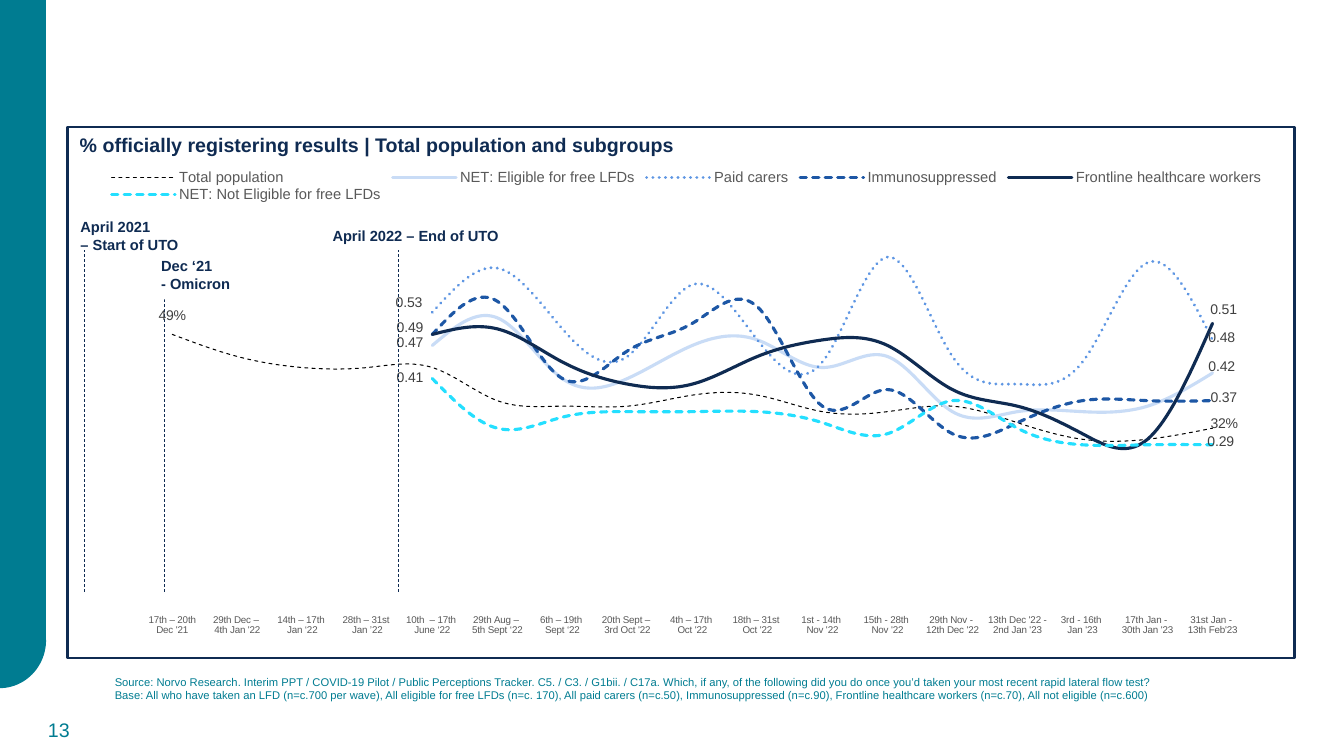
from lxml import etree
from pptx import Presentation
from pptx.chart.data import CategoryChartData
from pptx.dml.color import RGBColor
from pptx.enum.chart import XL_CHART_TYPE, XL_LABEL_POSITION, XL_LEGEND_POSITION
from pptx.enum.dml import MSO_LINE
from pptx.enum.shapes import MSO_CONNECTOR, MSO_SHAPE
from pptx.enum.text import MSO_ANCHOR, PP_ALIGN
from pptx.oxml.ns import qn
from pptx.util import Inches, Pt

DASH, DOT, SHORT_DASH = MSO_LINE.DASH, MSO_LINE.ROUND_DOT, MSO_LINE.SQUARE_DOT
LEFT, RIGHT, ABOVE = XL_LABEL_POSITION.LEFT, XL_LABEL_POSITION.RIGHT, XL_LABEL_POSITION.ABOVE
TEAL = RGBColor(0x00, 0x7C, 0x91)
NAVY = RGBColor(0x0F, 0x2B, 0x52)
WHITE = RGBColor(0xFF, 0xFF, 0xFF)
BLACK = RGBColor(0x00, 0x00, 0x00)
GREY = RGBColor(0x59, 0x59, 0x59)
LABEL_GREY = RGBColor(0x40, 0x40, 0x40)
PALE_BLUE = RGBColor(0xC9, 0xDC, 0xF6)
SKY_BLUE = RGBColor(0x5E, 0x96, 0xE3)
MID_BLUE = RGBColor(0x1D, 0x57, 0xA5)
CYAN = RGBColor(0x24, 0xDF, 0xFF)
FONT = "Arial"

HEADING = "% officially registering results | Total population and subgroups"
SOURCE = [
    "Source: Norvo Research. Interim PPT / COVID-19 Pilot / Public Perceptions Tracker. C5. / C3. / G1bii. / C17a. "
    "Which, if any, of the following did you do once you’d taken your most recent rapid lateral flow test?",
    "Base: All who have taken an LFD (n=c.700 per wave), All eligible for free LFDs (n=c. 170), "
    "All paid carers (n=c.50), Immunosuppressed (n=c.90), Frontline healthcare workers (n=c.70), "
    "All not eligible (n=c.600)",
]
WAVES = [
    "17th – 20th Dec '21", "29th Dec – \n4th Jan '22", "14th – 17th \nJan ‘22",
    "28th – 31st \nJan ’22", "10th  – 17th \nJune ‘22", "29th Aug – \n5th Sept ‘22",
    "6th – 19th \nSept ‘22", "20th Sept – \n3rd Oct '22", "4th – 17th \nOct '22",
    "18th – 31st \nOct '22", "1st - 14th \nNov '22", "15th - 28th \nNov '22",
    "29th Nov - \n12th Dec '22", "13th Dec '22 -\n2nd Jan '23", "3rd - 16th \nJan '23",
    "17th Jan - \n30th Jan '23", "31st Jan - \n13th Feb'23",
]
LAST = len(WAVES) - 1
START = 4
SERIES = [
    ("Total population", BLACK, 0.75, DASH,
     {0: (ABOVE, 0, -0.07), LAST: (RIGHT, -0.06, -0.05)},
     [0.49, 0.45, 0.43, 0.43, 0.43, 0.37, 0.36, 0.36, 0.38, 0.38, 0.35, 0.35, 0.36, 0.33, 0.3, 0.3, 0.32]),
    ("NET: Eligible for free LFDs", PALE_BLUE, 2.25, None,
     {START: (LEFT, -0.05, -0.03), LAST: (RIGHT, -0.08, -0.06)},
     [0.47, 0.52, 0.41, 0.41, 0.47, 0.48, 0.43, 0.45, 0.35, 0.35, 0.35, 0.36, 0.42]),
    ("Paid carers", SKY_BLUE, 2.25, DOT,
     {START: (LEFT, -0.06, -0.1), LAST: (RIGHT, -0.08, -0.02)},
     [0.53, 0.61, 0.5, 0.45, 0.58, 0.48, 0.44, 0.63, 0.45, 0.4, 0.44, 0.62, 0.48]),
    ("Immunosuppressed", MID_BLUE, 2.25, SHORT_DASH,
     {LAST: (RIGHT, -0.06, -0.03)},
     [0.49, 0.55, 0.41, 0.46, 0.51, 0.54, 0.36, 0.39, 0.31, 0.33, 0.37, 0.37, 0.37]),
    ("Frontline healthcare workers", NAVY, 2.25, None,
     {START: (LEFT, -0.05, -0.07), LAST: (ABOVE, 0.11, -0.02)},
     [0.49, 0.5, 0.44, 0.4, 0.4, 0.45, 0.48, 0.47, 0.39, 0.36, 0.31, 0.3, 0.51]),
    ("NET: Not Eligible for free LFDs", CYAN, 2.25, SHORT_DASH,
     {START: (LEFT, -0.05, -0.01), LAST: (RIGHT, -0.09, -0.03)},
     [0.41, 0.32, 0.34, 0.35, 0.35, 0.35, 0.33, 0.31, 0.37, 0.32, 0.29, 0.29, 0.29]),
]
OMICRON = (1.63, (1.5, 2.48, 0.91, 0.49), ["Dec ‘21", "- Omicron"], WHITE)
UTO_EVENTS = [
    (3.95, (3.2, 2.24, 1.95, 0.19), ["April 2022 – End of UTO"], None),
    (0.84, (0.7, 2.19, 0.8, 0.29), ["April 2021", "– Start of UTO"], WHITE),
]
EVENT_TOP, EVENT_BOTTOM = 2.48, 5.87

prs = Presentation()
prs.slide_width, prs.slide_height = Inches(13.33), Inches(7.5)
s = prs.slides.add_slide(prs.slide_layouts[5])


def style(font, size, color, bold=False):
    font.name, font.size, font.bold = FONT, Pt(size), bold
    font.color.rgb = color


def write(sp, lines, size=10.5, color=NAVY, bold=False, wrap=True, align=PP_ALIGN.LEFT, inset_y=0.05):
    tf = sp.text_frame
    tf.word_wrap, tf.vertical_anchor = wrap, MSO_ANCHOR.MIDDLE
    tf.margin_left = tf.margin_right = Inches(0.1)
    tf.margin_top = tf.margin_bottom = Inches(inset_y)
    for i, line in enumerate(lines):
        p = tf.add_paragraph() if i else tf.paragraphs[0]
        p.alignment = align
        r = p.add_run()
        r.text = line
        style(r.font, size, color, bold)


def text_box(box, lines, **fmt):
    write(s.shapes.add_textbox(*map(Inches, box)), lines, **fmt)


def shape(kind, box, fill, line=None, width=1):
    sp = s.shapes.add_shape(kind, *map(Inches, box))
    sp.shadow.inherit = False
    sp.fill.solid()
    sp.fill.fore_color.rgb = fill
    if line is None:
        sp.line.fill.background()
    else:
        sp.line.color.rgb, sp.line.width = line, Pt(width)
    return sp


def event(x, box, lines, fill):
    cn = s.shapes.add_connector(MSO_CONNECTOR.STRAIGHT, *map(Inches, (x, EVENT_BOTTOM, x, EVENT_TOP)))
    cn.line.color.rgb, cn.line.width, cn.line.dash_style = NAVY, Pt(0.5), DASH
    etree.SubElement(cn._element.spPr, qn("a:effectLst"))
    if fill is None:
        text_box(box, lines, bold=True, wrap=False, inset_y=0)
    else:
        write(shape(MSO_SHAPE.RECTANGLE, box, fill), lines, bold=True, wrap=False)


def place(element, index, **values):
    layout = element.find(qn("c:layout"))
    if layout is None:
        layout = etree.Element(qn("c:layout"))
        element.insert(index, layout)
    manual = etree.SubElement(layout, qn("c:manualLayout"))
    for tag, value in values.items():
        etree.SubElement(manual, qn("c:" + tag)).set("val", str(value))


def tracker_chart(left, top, width, height):
    data = CategoryChartData()
    data.categories = WAVES
    for name, _, _, _, _, values in SERIES:
        gap = [None] * (len(WAVES) - len(values))
        data.add_series(name, gap + values, "General" if gap else "0%")
    box = map(Inches, (left, top, width, height))
    chart = s.shapes.add_chart(XL_CHART_TYPE.LINE, *box, data).chart
    style(chart.font, 10, BLACK)
    chart.has_title = False
    chart.has_legend = True
    chart.legend.position = XL_LEGEND_POSITION.TOP
    chart.legend.include_in_layout = False
    style(chart.legend.font, 10.5, GREY)
    place(chart.legend._element, 1, xMode="edge", yMode="edge", x=0, y=0.02, w=1, h=0.07)
    place(chart._chartSpace.chart.plotArea, 0, layoutTarget="inner", xMode="edge", yMode="edge",
          x=0.03, y=0.12, w=0.95, h=0.77)
    style(chart.category_axis.tick_labels.font, 7, GREY)
    chart.category_axis.format.line.fill.background()
    axis = chart.value_axis
    axis.minimum_scale, axis.maximum_scale = 0, 0.7
    axis.has_major_gridlines = axis.visible = False
    for ser, (_, color, weight, dash, labels, _) in zip(chart.plots[0].series, SERIES):
        ser.smooth = True
        line = ser.format.line
        line.color.rgb, line.width, line.dash_style = color, Pt(weight), dash
        ser._element.find(".//" + qn("a:ln")).set("cap", "rnd")
        ser.data_labels.show_value = False
        for i, (position, dx, dy) in labels.items():
            label = ser.points[i].data_label
            style(label.font, 10, LABEL_GREY)
            label.position = position
            d_lbl = ser._element.find(qn("c:dLbls")).findall(qn("c:dLbl"))[-1]
            place(d_lbl, 1, x=dx / width, y=dy / height)


shape(MSO_SHAPE.RECTANGLE, (0, 0, 0.45, 6.35), TEAL, TEAL)
corner = shape(MSO_SHAPE.PIE, (-0.46, 5.88, 0.91, 0.94), TEAL, TEAL)
corner.adjustments[0], corner.adjustments[1] = 108, 162
corner.rotation = 180
shape(MSO_SHAPE.RECTANGLE, (0.67, 1.26, 12.17, 5.27), WHITE, NAVY, 1.5)
event(*OMICRON)
text_box((1.04, 6.63, 10.94, 0.4), SOURCE, size=8, color=TEAL)
text_box((0.14, 7.04, 0.65, 0.4), ["13"], size=14, color=TEAL, align=PP_ALIGN.RIGHT)
tracker_chart(1.04, 1.57, 11.54, 4.98)
for item in UTO_EVENTS:
    event(*item)

title = s.shapes.title
title.left, title.top, title.width, title.height = map(Inches, (0.69, 1.27, 6.49, 0.34))
write(title, [HEADING], size=14, bold=True)
s.shapes._spTree.append(title._element)

prs.save("out.pptx")
